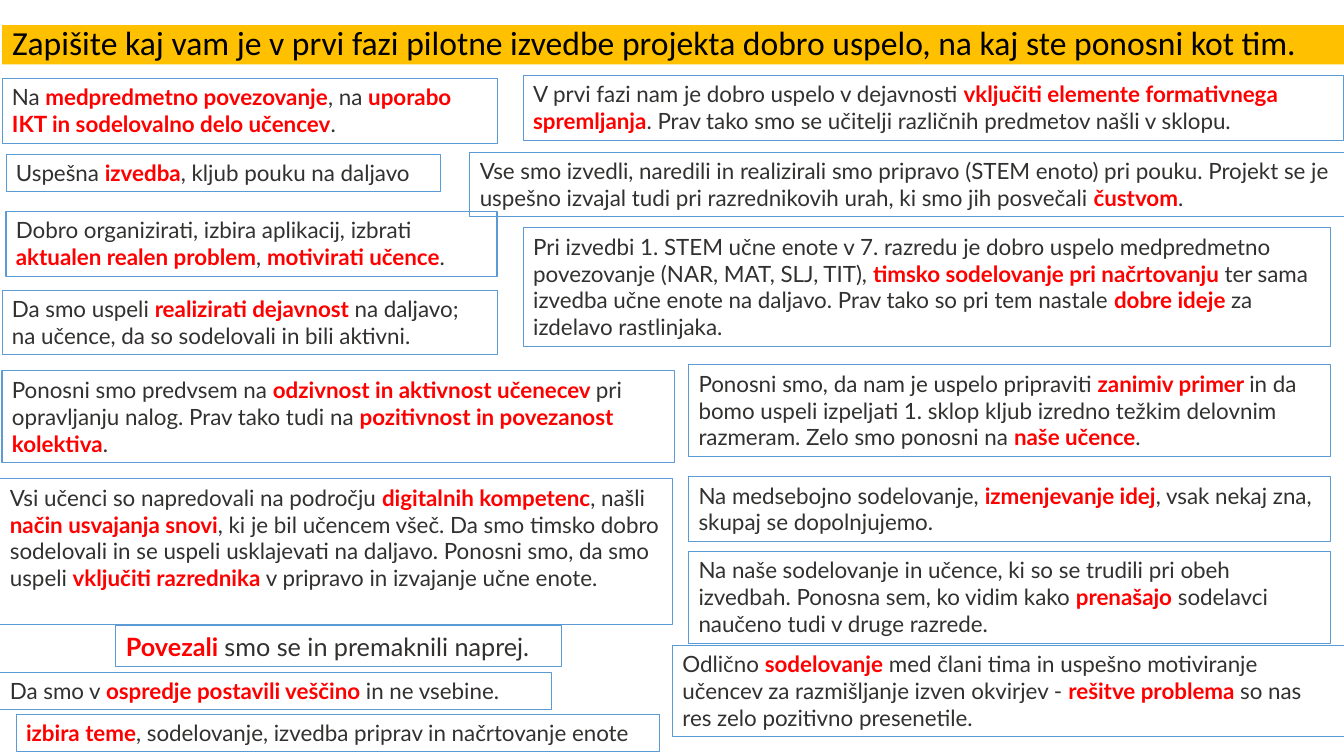
from dataclasses import dataclass
from typing import Any

from pptx import Presentation
from pptx.dml.color import RGBColor
from pptx.enum.text import MSO_ANCHOR, MSO_AUTO_SIZE, PP_ALIGN
from pptx.slide import Slide
from pptx.util import Inches, Length, Pt


@dataclass(frozen=True)
class Theme:
    banner: RGBColor = RGBColor(0xFF, 0xC0, 0x00)
    title: RGBColor = RGBColor(0x00, 0x00, 0x00)
    body: RGBColor = RGBColor(0x32, 0x31, 0x30)
    accent: RGBColor = RGBColor(0xFF, 0x00, 0x00)
    border: RGBColor = RGBColor(0x5B, 0x9B, 0xD5)
    paper: RGBColor = RGBColor(0xFF, 0xFF, 0xFF)
    title_font: str = "Calibri"
    body_font: str = "Lato"
    title_size: int = 24
    body_size: int = 16
    large_size: int = 18
    border_width: float = 0.75


THEME = Theme()

# The slide is a grid of square cells, one inch each.
COLUMNS, ROWS = 13.33, 7.5
LEFT, INDENT, MIDDLE, RIGHT = 0.02, 0.06, 5.19, 6.83
NARROW, HALF, WIDE = 4.91, 6.67, 6.37
PADDING = 0.1
LINE_PER_POINT = 0.27 / 16

TITLE = ("Zapišite kaj vam je v prvi fazi pilotne izvedbe projekta dobro uspelo, "
         "na kaj ste ponosni kot tim.")


@dataclass(frozen=True)
class Answer:
    """A bordered answer; words between asterisks are emphasised."""
    column: float
    row: float
    width: float
    lines: int
    text: str
    filled: bool = False
    size: int = THEME.body_size


ANSWERS = [
    Answer(LEFT, 0.78, NARROW, 2,
           "Na *medpredmetno povezovanje*, na *uporabo IKT in sodelovalno delo učencev*."),
    Answer(INDENT, 1.53, 4.31, 1, "Uspešna *izvedba*, kljub pouku na daljavo"),
    Answer(MIDDLE, 0.75, 8.14, 2,
           "V prvi fazi nam je dobro uspelo v dejavnosti *vključiti elemente formativnega "
           "spremljanja*. Prav tako smo se učitelji različnih predmetov našli v sklopu."),
    Answer(LEFT, 3.68, HALF, 3,
           "Ponosni smo predvsem na *odzivnost in aktivnost učenecev *pri opravljanju nalog. "
           "Prav tako tudi na *pozitivnost in povezanost kolektiva*."),
    Answer(4.66, 1.51, 8.68, 2,
           "Vse smo izvedli, naredili in realizirali smo pripravo (STEM enoto) pri pouku. "
           "Projekt se je uspešno izvajal tudi pri razrednikovih urah, ki smo jih posvečali "
           "*čustvom*."),
    Answer(INDENT, 2.1, 4.87, 2,
           "Dobro organizirati, izbira aplikacij, izbrati *aktualen realen problem*, "
           "*motivirati učence*."),
    Answer(LEFT, 2.88, NARROW, 2,
           "Da smo uspeli *realizirati dejavnost *na daljavo; na učence, da so sodelovali "
           "in bili aktivni."),
    Answer(MIDDLE, 2.26, 8.01, 4,
           "Pri izvedbi 1. STEM učne enote v 7. razredu je dobro uspelo medpredmetno "
           "povezovanje (NAR, MAT, SLJ, TIT), *timsko sodelovanje pri načrtovanju *ter sama "
           "izvedba učne enote na daljavo. Prav tako so pri tem nastale *dobre ideje *za "
           "izdelavo rastlinjaka."),
    Answer(RIGHT, 3.62, WIDE, 3,
           "Ponosni smo, da nam je uspelo pripraviti *zanimiv primer *in da bomo uspeli "
           "izpeljati 1. sklop kljub izredno težkim delovnim razmeram. Zelo smo ponosni na "
           "*naše učence*."),
    Answer(0, 4.75, HALF, 5,
           "Vsi učenci so napredovali na področju *digitalnih kompetenc*, našli *način "
           "usvajanja snovi*, ki je bil učencem všeč. Da smo timsko dobro sodelovali in se "
           "uspeli usklajevati na daljavo. Ponosni smo, da smo uspeli *vključiti razrednika "
           "*v pripravo in izvajanje učne enote.", filled=True),
    Answer(RIGHT, 4.73, WIDE, 2,
           "Na medsebojno sodelovanje, *izmenjevanje idej*, vsak nekaj zna, skupaj se "
           "dopolnjujemo.", filled=True),
    Answer(RIGHT, 5.47, WIDE, 3,
           "Na naše sodelovanje in učence, ki so se trudili pri obeh izvedbah. Ponosna sem, "
           "ko vidim kako *prenašajo* sodelavci naučeno tudi v druge razrede."),
    Answer(1.15, 6.21, 4.42, 1, "*Povezali *smo se in premaknili naprej.",
           filled=True, size=THEME.large_size),
    Answer(0, 6.67, 5.47, 1, "Da smo v *ospredje postavili veščino *in ne vsebine.",
           filled=True),
    Answer(HALF, 6.4, HALF, 3,
           "Odlično *sodelovanje* med člani tima in uspešno motiviranje učencev za "
           "razmišljanje izven okvirjev - *rešitve problema *so nas res zelo pozitivno "
           "presenetile.", filled=True),
    Answer(0.16, 7.09, 6.38, 1,
           "*izbira teme*, sodelovanje, izvedba priprav in načrtovanje enote", filled=True),
]


def apply_format(target: Any, values: dict[str, Any]) -> None:
    for name, value in values.items():
        setattr(target, name, value)


def grid_box(column: float, row: float, width: float, height: float) -> dict[str, Length]:
    return {"left": Inches(column), "top": Inches(row),
            "width": Inches(width), "height": Inches(height)}


def add_title(slide: Slide) -> None:
    title = slide.shapes.title
    apply_format(title, grid_box(LEFT, 0.25, COLUMNS - LEFT, 0.39))
    title.fill.solid()
    title.fill.fore_color.rgb = THEME.banner
    apply_format(title.text_frame, {"text": TITLE, "word_wrap": True,
                                    "auto_size": MSO_AUTO_SIZE.NONE,
                                    "vertical_anchor": MSO_ANCHOR.MIDDLE})
    paragraph = title.text_frame.paragraphs[0]
    apply_format(paragraph, {"alignment": PP_ALIGN.LEFT, "line_spacing": 0.9})
    font = paragraph.runs[0].font
    apply_format(font, {"name": THEME.title_font, "size": Pt(THEME.title_size)})
    font.color.rgb = THEME.title


def add_answer(slide: Slide, answer: Answer) -> None:
    height = PADDING + answer.lines * answer.size * LINE_PER_POINT
    shape = slide.shapes.add_textbox(
        **grid_box(answer.column, answer.row, answer.width, height))
    if answer.filled:
        shape.fill.solid()
        shape.fill.fore_color.rgb = THEME.paper
    shape.line.color.rgb = THEME.border
    shape.line.width = Pt(THEME.border_width)
    apply_format(shape.text_frame, {"word_wrap": True,
                                    "auto_size": MSO_AUTO_SIZE.SHAPE_TO_FIT_TEXT})
    paragraph = shape.text_frame.paragraphs[0]
    for index, words in enumerate(answer.text.split("*")):
        if not words:
            continue
        emphasised = index % 2 == 1
        run = paragraph.add_run()
        run.text = words
        apply_format(run.font, {"name": THEME.body_font, "size": Pt(answer.size),
                                "bold": emphasised})
        run.font.color.rgb = THEME.accent if emphasised else THEME.body


def main() -> None:
    presentation = Presentation()
    apply_format(presentation, {"slide_width": Inches(COLUMNS),
                                "slide_height": Inches(ROWS)})
    slide = presentation.slides.add_slide(
        presentation.slide_layouts.get_by_name("Title Only"))
    add_title(slide)
    for answer in ANSWERS:
        add_answer(slide, answer)
    presentation.save("out.pptx")


if __name__ == "__main__":
    main()
